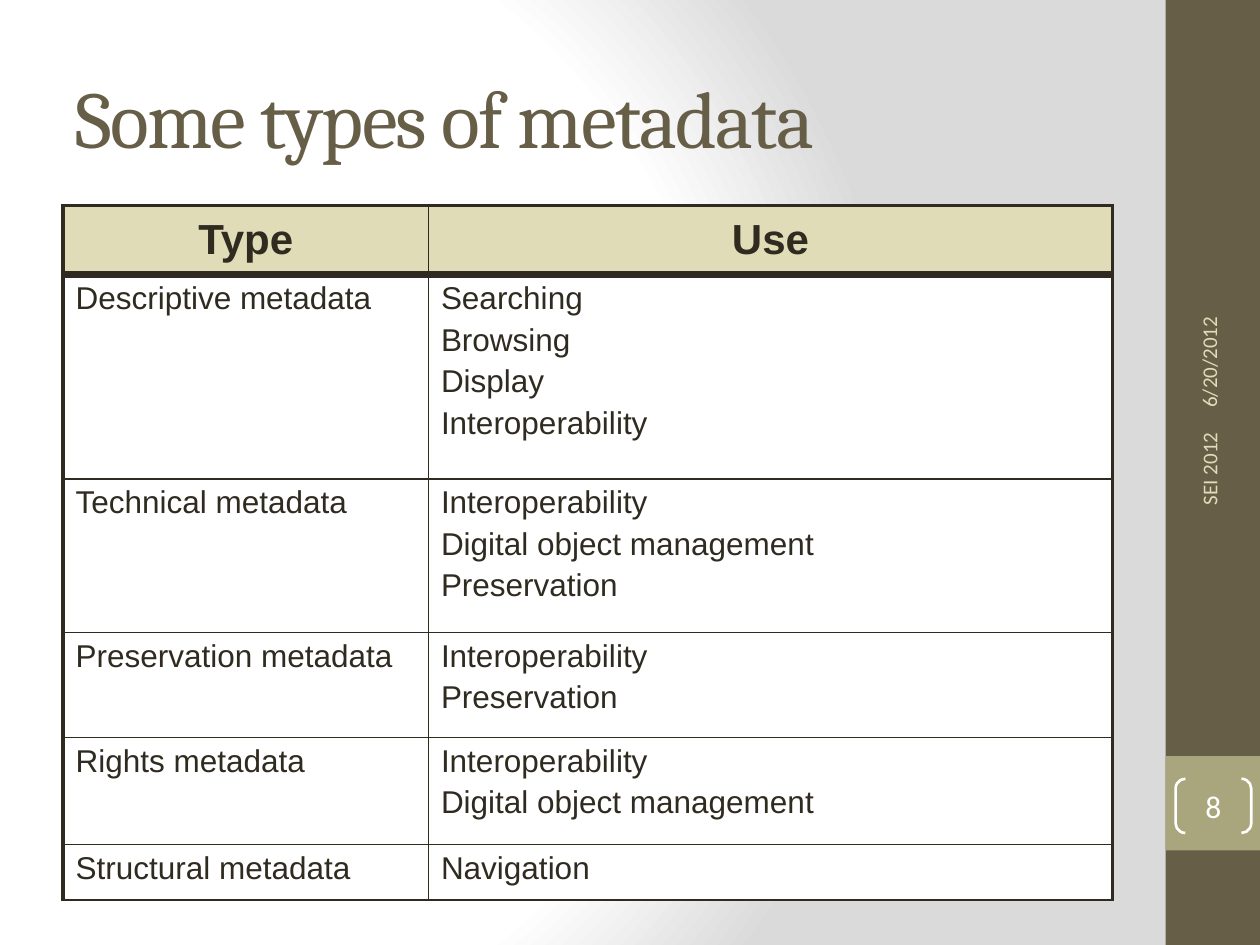
from lxml.etree import SubElement
from pptx import Presentation
from pptx.dml.color import RGBColor
from pptx.enum.shapes import MSO_SHAPE
from pptx.enum.text import MSO_ANCHOR, PP_ALIGN
from pptx.oxml import parse_xml
from pptx.oxml.ns import nsdecls, qn
from pptx.util import Pt

OLIVE, SAGE, SAND, INK, WHITE = "675E47", "A9A57C", "DFDCB7", "2F2B20", "FFFFFF"


def color(value):
    return RGBColor.from_string(value)


class SlideBuilder:
    def __init__(self, prs):
        self.s = prs.slides.add_slide(prs.slide_layouts[5])

    def background(self, stops):
        gs = "".join(f'<a:gs pos="{pos * 1000}"><a:srgbClr val="{c}"/></a:gs>' for pos, c in stops)
        bg = parse_xml(
            f'<p:bg {nsdecls("p", "a")}><p:bgPr><a:gradFill rotWithShape="1"><a:gsLst>{gs}</a:gsLst>'
            '<a:path path="circle"><a:fillToRect l="20000" t="50000" r="100000" b="50000"/></a:path>'
            '</a:gradFill><a:effectLst/></p:bgPr></p:bg>')
        self.s.shapes._spTree.addprevious(bg)

    def run(self, p, text, size, font, c, bold=False):
        r = p.add_run()
        r.text = text
        r.font.size, r.font.name, r.font.bold = Pt(size), font, bold
        r.font.color.rgb = color(c)
        return r

    def title(self, text, x, y, w, h):
        sp = self.s.shapes.title
        sp.left, sp.top, sp.width, sp.height = Pt(x), Pt(y), Pt(w), Pt(h)
        tf = sp.text_frame
        tf.vertical_anchor = MSO_ANCHOR.MIDDLE
        tf.paragraphs[0].alignment = PP_ALIGN.LEFT
        r = self.run(tf.paragraphs[0], text, 46, "Cambria", OLIVE)
        r.font._element.set("spc", "-100")

    def shape(self, kind, x, y, w, h, fill=None, line=None):
        sp = self.s.shapes.add_shape(kind, Pt(x), Pt(y), Pt(w), Pt(h))
        sp.shadow.inherit = False
        if fill:
            sp.fill.solid()
            sp.fill.fore_color.rgb = color(fill)
        else:
            sp.fill.background()
        if line:
            sp.line.color.rgb, sp.line.width = color(line), Pt(1.5)
        else:
            sp.line.fill.background()
        return sp

    def page_number(self, text, x, y, w, h):
        sp = self.shape(MSO_SHAPE.DOUBLE_BRACKET, x, y, w, h, line=WHITE)
        sp.adjustments[0] = 0.18
        tf = sp.text_frame
        tf.margin_left = tf.margin_right = tf.margin_top = tf.margin_bottom = 0
        tf.vertical_anchor = MSO_ANCHOR.MIDDLE
        tf.paragraphs[0].alignment = PP_ALIGN.CENTER
        self.run(tf.paragraphs[0], text, 18, "Calibri", WHITE)

    def side_text(self, text, x, y, w, h, align):
        sp = self.s.shapes.add_textbox(Pt(x), Pt(y), Pt(w), Pt(h))
        sp.rotation = 270
        tf = sp.text_frame
        tf.word_wrap = True
        tf.vertical_anchor = MSO_ANCHOR.MIDDLE
        tf.paragraphs[0].alignment = align
        self.run(tf.paragraphs[0], text, 12, "Calibri", SAND)

    def borders(self, cell, widths):
        tcPr = cell._tc.get_or_add_tcPr()
        for i, (side, width) in enumerate(zip("LRTB", widths)):
            ln = parse_xml(
                f'<a:ln{side} {nsdecls("a")} w="{Pt(width)}"><a:solidFill>'
                f'<a:srgbClr val="{INK}"/></a:solidFill></a:ln{side}>')
            tcPr.insert(i, ln)

    def cell(self, cell, lines, header):
        cell.fill.solid()
        cell.fill.fore_color.rgb = color(SAND if header else WHITE)
        cell.vertical_anchor = MSO_ANCHOR.MIDDLE if header else MSO_ANCHOR.TOP
        tf = cell.text_frame
        for i, line in enumerate(lines):
            p = tf.add_paragraph() if i else tf.paragraphs[0]
            p.alignment = PP_ALIGN.CENTER if header else PP_ALIGN.LEFT
            before = SubElement(p._p.get_or_add_pPr(), qn("a:spcBef"))
            SubElement(before, qn("a:spcPct")).set("val", "20000")
            self.run(p, line, 24 if header else 18, "Arial", INK, header)

    def table(self, rows, x, y, col_widths, row_heights):
        frame = self.s.shapes.add_table(len(rows), len(col_widths), Pt(x), Pt(y),
                                        Pt(sum(col_widths)), Pt(sum(row_heights)))
        table = frame.table
        table.first_row = table.horz_banding = False
        for column, width in zip(table.columns, col_widths):
            column.width = Pt(width)
        last = len(col_widths) - 1
        for i, (row, height) in enumerate(zip(rows, row_heights)):
            table.rows[i].height = Pt(height)
            for j, lines in enumerate(row):
                cell = table.cell(i, j)
                self.cell(cell, lines, header=i == 0)
                # Heavy outer frame, thickest rule under the header
                self.borders(cell, (2.25 if j == 0 else 1, 2.25 if j == last else 1,
                                    {0: 2.25, 1: 4.5}.get(i, 1), 4.5 if i == 0 else 1))


METADATA = [
    (["Type"], ["Use"]),
    (["Descriptive metadata"], ["Searching", "Browsing", "Display", "Interoperability"]),
    (["Technical metadata"], ["Interoperability", "Digital object management", "Preservation"]),
    (["Preservation metadata"], ["Interoperability", "Preservation"]),
    (["Rights metadata"], ["Interoperability", "Digital object management"]),
    (["Structural metadata"], ["Navigation"]),
]


def main():
    prs = Presentation()
    prs.slide_width, prs.slide_height = Pt(720), Pt(540)
    slide = SlideBuilder(prs)

    # Background and side band
    slide.background([(0, WHITE), (75, WHITE), (100, "DADADA")])
    slide.shape(MSO_SHAPE.RECTANGLE, 666, 0, 54, 540, fill=OLIVE)
    slide.shape(MSO_SHAPE.RECTANGLE, 666, 432, 54, 54, fill=SAGE)

    # Title and table
    slide.title("Some types of metadata", 36, 21.6, 600, 90)
    slide.table(METADATA, 36, 117.4, [208.8, 391], [39.6, 116.6, 87.8, 60, 61.2, 31.7])

    # Date, footer and page number
    slide.side_text("6/20/2012", 594.7, 129.6, 192, 28.8, PP_ALIGN.LEFT)
    slide.side_text("SEI 2012", 597.6, 319, 186.5, 28.8, PP_ALIGN.RIGHT)
    slide.page_number("8", 671.8, 445, 43.2, 31)

    prs.save("out.pptx")


if __name__ == "__main__":
    main()
